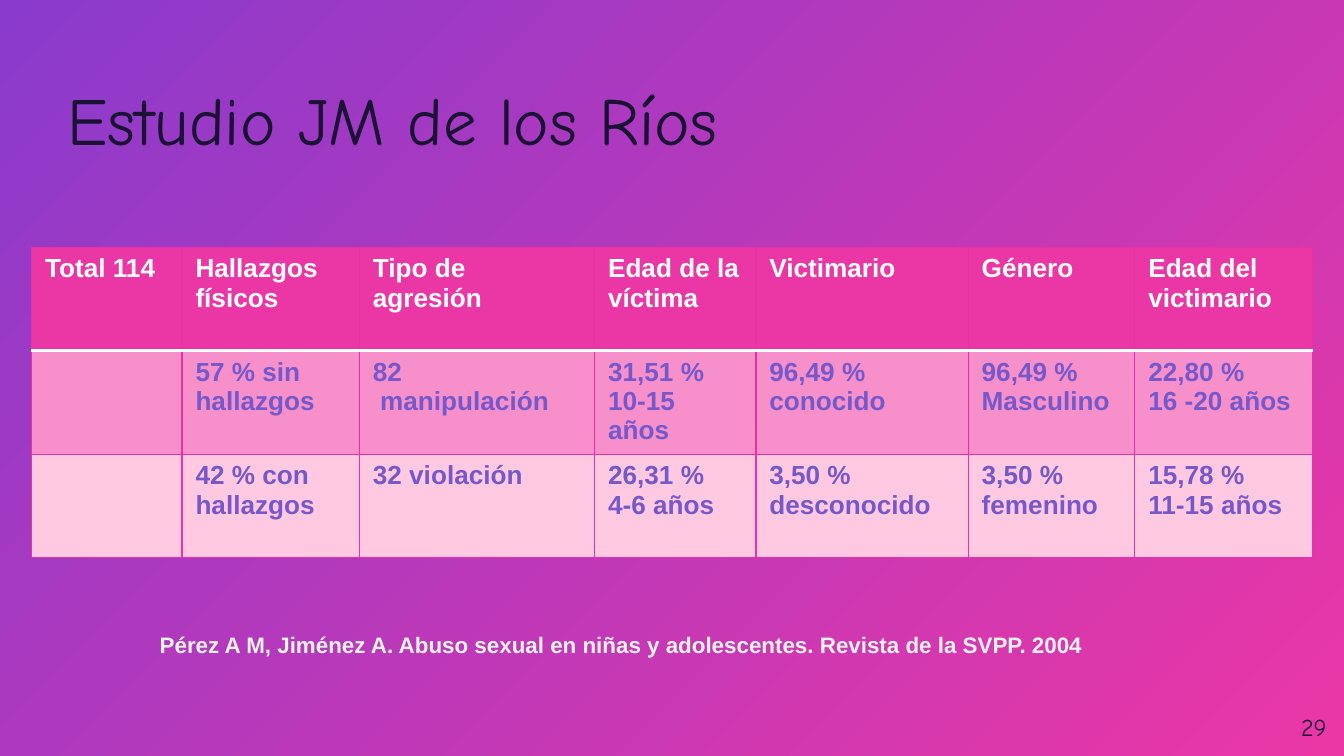
import pptx
import pptx.util
import pptx.oxml
import pptx.oxml.ns
import pptx.dml.color
import pptx.enum.text

Inches = pptx.util.Inches
Pt = pptx.util.Pt
RGBColor = pptx.dml.color.RGBColor
Align = pptx.enum.text.PP_ALIGN
Anchor = pptx.enum.text.MSO_ANCHOR

PURPLE = RGBColor(0x8A, 0x3A, 0xCC)
PINK = RGBColor(0xEB, 0x37, 0xA6)
MID_PINK = RGBColor(0xF7, 0x8F, 0xCA)
PALE_PINK = RGBColor(0xFF, 0xCA, 0xE1)
BORDER = RGBColor(0xEA, 0x31, 0xA3)
WHITE = RGBColor(0xFF, 0xFF, 0xFF)
INK = RGBColor(0x1A, 0x11, 0x35)
VIOLET = RGBColor(0x75, 0x58, 0xCA)
MIST = RGBColor(0xF1, 0xF0, 0xF3)

TITLE = "Estudio JM de los Ríos"
SOURCE = "Pérez A M, Jiménez A. Abuso sexual en niñas y adolescentes. Revista de la SVPP. 2004"
PAGE_NUMBER = "29"
ROWS = [
    ["Total 114", "Hallazgos físicos", "Tipo de agresión", "Edad de la víctima",
     "Victimario", "Género", "Edad del victimario"],
    ["", "57 % sin hallazgos", "82\n manipulación", "31,51 %\n10-15 años",
     "96,49 % conocido", "96,49 %\nMasculino", "22,80 %\n16 -20 años"],
    ["", "42 % con hallazgos", "32 violación", "26,31 %\n4-6 años",
     "3,50 % desconocido", "3,50 %\nfemenino", "15,78 %\n11-15 años"],
]
ROW_STYLES = [(PINK, WHITE), (MID_PINK, VIOLET), (PALE_PINK, VIOLET)]
COLUMN_WIDTHS = [1.12, 1.32, 1.75, 1.2, 1.58, 1.24, 1.32]
ROW_HEIGHT = 0.77
SLIDE_WIDTH = 10


def write_text(frame, text, size, color, font="Arial", bold=False, align=Align.LEFT, spacing=None):
    frame.word_wrap = True
    for index, line in enumerate(text.split("\n")):
        para = frame.add_paragraph() if index else frame.paragraphs[0]
        para.alignment = align
        if spacing:
            para.line_spacing = spacing
        span = para.add_run()
        span.text = line
        span.font.name = font
        span.font.size = Pt(size)
        span.font.bold = bold
        span.font.color.rgb = color


def add_text(page, place, text, flush=True, **style):
    box = page.shapes.add_textbox(*[Inches(value) for value in place])
    frame = box.text_frame
    if flush:
        frame.margin_left = frame.margin_right = frame.margin_top = frame.margin_bottom = 0
        frame.vertical_anchor = Anchor.MIDDLE
    write_text(frame, text, **style)


def add_border(cell, side, color, width):
    cell._tc.get_or_add_tcPr().append(pptx.oxml.parse_xml(
        f'<a:ln{side} {pptx.oxml.ns.nsdecls("a")} w="{Pt(width)}"><a:solidFill>'
        f'<a:srgbClr val="{color}"/></a:solidFill></a:ln{side}>'))


def add_findings(page):
    width = sum(COLUMN_WIDTHS)
    frame = page.shapes.add_table(
        len(ROWS), len(COLUMN_WIDTHS), Inches((SLIDE_WIDTH - width) / 2), Inches(1.84),
        Inches(width), Inches(ROW_HEIGHT * len(ROWS)))
    table = frame.table
    for column, column_width in zip(table.columns, COLUMN_WIDTHS):
        column.width = Inches(column_width)
    for r, (texts, (fill, color)) in enumerate(zip(ROWS, ROW_STYLES)):
        table.rows[r].height = Inches(ROW_HEIGHT)
        for c, text in enumerate(texts):
            cell = table.cell(r, c)
            cell.margin_bottom = Inches(0.01)
            for side in "LRTB":
                under_header = (r, side) in [(0, "B"), (1, "T")]
                add_border(cell, side, *((WHITE, 2) if under_header else (BORDER, 0.75)))
            cell.fill.solid()
            cell.fill.fore_color.rgb = fill
            if text:
                write_text(cell.text_frame, text, size=14, color=color, bold=True)


deck = pptx.Presentation()
deck.slide_width = Inches(SLIDE_WIDTH)
deck.slide_height = Inches(SLIDE_WIDTH * 9 / 16)
page = deck.slides.add_slide(deck.slide_layouts[6])

background = page.background.fill
background.gradient()
background.gradient_angle = 315
for stop, position, color in zip(background.gradient_stops, (0, 1), (PURPLE, PINK)):
    stop.position = position
    stop.color.rgb = color

add_text(page, (0.5, 0.51, 6.42, 0.82), TITLE, size=36, color=INK, font="Comic Neue", spacing=0.9)
add_text(page, (9.27, 5.19, 0.6, 0.43), PAGE_NUMBER, size=13, color=INK,
         font="Comic Neue", align=Align.RIGHT)
add_findings(page)
add_text(page, (1.09, 4.65, 7.63, 0.3), SOURCE, flush=False, size=12, color=MIST, bold=True)

deck.save("out.pptx")
